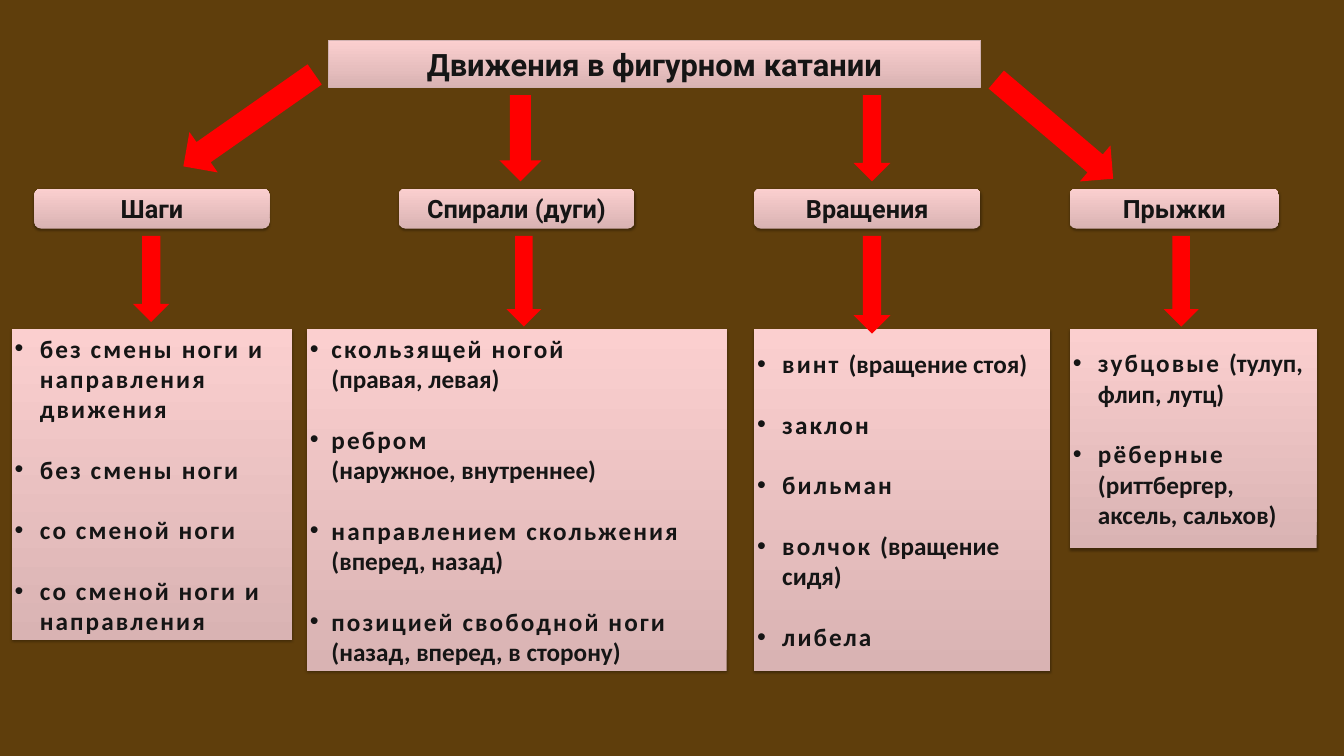
from lxml import etree
from pptx import Presentation
from pptx.dml.color import RGBColor
from pptx.enum import shapes, text
from pptx.oxml import ns
from pptx.util import Pt

HUES = {"back": "5F3E0C", "low": "D9B3B3", "high": "FBCFCF",
        "edge": "D1B2B2", "ink": "151515", "arrow": "FF0000"}
KIND = shapes.MSO_SHAPE

TITLE = "Движения в фигурном катании"
HEADS = [("Шаги", 49, 336), ("Спирали (дуги)", 569.5, 337),
         ("Вращения", 1077, 324), ("Прыжки", 1528, 299)]
LISTS = [
    (16.5, 401, 444, 36, [
        [("без смены ноги и направления движения", "")],
        [("без смены ноги", "")],
        [("со сменой ноги", "")],
        [("со сменой ноги и направления", "")]]),
    (438, 600, 488, 31, [
        [("скользящей ногой", ""), ("", "(правая, левая)")],
        [("ребром", ""), ("", "(наружное, внутреннее)")],
        [("направлением скольжения", ""), ("", "(вперед, назад)")],
        [("позицией свободной ноги", ""), ("", "(назад, вперед, в сторону)")]]),
    (1077, 423.5, 488, 36, [
        [("винт ", "(вращение стоя)")],
        [("заклон", "")],
        [("бильман", "")],
        [("волчок ", "(вращение сидя)")],
        [("либела", "")]]),
    (1528, 353, 313, 36, [
        [("зубцовые ", "(тулуп, флип, лутц)")],
        [("рёберные ", "(риттбергер, аксель, сальхов)")]]),
]
ARROWS = [(320.5, 57.5, 70.5, 229, 55), (713.5, 136, 60, 123, 0),
          (1219.5, 136, 52.5, 123, 0), (1473, 75, 67.5, 219, 310.3),
          (190, 337, 52, 123, 0), (723.5, 337, 50, 129.5, 0),
          (1219.5, 337, 52.5, 139.5, 0), (1662.5, 337, 50, 129.5, 0)]


def hue(name):
    return RGBColor.from_string(HUES[name])


def node(base, tag, **attrs):
    return etree.SubElement(base, ns.qn(tag), **attrs)


def add_run(para, words, font, size, gap=0):
    run = para.add_run()
    run.text = words
    run.font.name = font
    run.font.size = Pt(size)
    run.font.bold = True
    run.font.color.rgb = hue("ink")
    if gap:
        run.font._element.set("spc", str(gap * 100))


def shade(shape):
    shape.fill.gradient()
    shape.fill.gradient_angle = 90
    for stop, name in zip(shape.fill.gradient_stops, ("low", "high")):
        stop.color.rgb = hue(name)


def set_frame(shape):
    frame = shape.text_frame
    frame.word_wrap = True
    frame.auto_size = text.MSO_AUTO_SIZE.SHAPE_TO_FIT_TEXT
    frame.vertical_anchor = text.MSO_ANCHOR.MIDDLE
    frame.margin_left = frame.margin_right = Pt(4.5)
    frame.margin_top = frame.margin_bottom = Pt(4.5)
    return frame


def add_label(shape, words, size):
    para = set_frame(shape).paragraphs[0]
    para.alignment = text.PP_ALIGN.CENTER
    add_run(para, words, "Roboto", size)


def add_title(slide):
    title = slide.shapes.title
    title.left, title.top, title.width, title.height = map(Pt, (469.5, 57.5, 931.5, 67.5))
    geom = etree.Element(ns.qn("a:prstGeom"), prst="roundRect")
    node(geom, "a:avLst")
    title.element.spPr.insert(1, geom)
    shade(title)
    title.line.color.rgb = hue("edge")
    title.line.width = Pt(0.75)
    add_label(title, TITLE, 44)


def add_card(slide, kind, left, top, width, height):
    card = slide.shapes.add_shape(kind, Pt(left), Pt(top), Pt(width), Pt(height))
    shade(card)
    card.line.fill.background()
    card.shadow.inherit = False
    glow = node(card.element.spPr.find(ns.qn("a:effectLst")), "a:outerShdw",
                blurRad=str(Pt(3.5)), dist=str(Pt(2.2)), dir="5400000", rotWithShape="0")
    tint = node(glow, "a:srgbClr", val="000000")
    node(tint, "a:alpha", val="32000")
    return card


def add_list(slide, left, width, height, hang, items):
    frame = set_frame(add_card(slide, KIND.RECTANGLE, left, 470, width, height))
    for row, item in enumerate(items):
        for step, (main_words, note) in enumerate(item):
            first = row == 0 and step == 0
            para = frame.paragraphs[0] if first else frame.add_paragraph()
            para.alignment = text.PP_ALIGN.LEFT
            props = para._p.get_or_add_pPr()
            props.set("marL", str(Pt(hang)))
            props.set("indent", str(-Pt(hang) if step == 0 else 0))
            if step == 0:
                node(props, "a:buFont", typeface="Arial")
                node(props, "a:buChar", char="•")
                if row:
                    para.space_before = Pt(43.5)
            if main_words:
                add_run(para, main_words, "Calibri", 36, 3)
            if note:
                add_run(para, note, "Calibri", 36)


def add_arrow(slide, left, top, width, height, turn):
    arrow = slide.shapes.add_shape(KIND.DOWN_ARROW, Pt(left), Pt(top), Pt(width), Pt(height))
    arrow.rotation = turn
    arrow.fill.solid()
    arrow.fill.fore_color.rgb = hue("arrow")
    arrow.line.fill.background()
    arrow.shadow.inherit = False


def main():
    deck = Presentation()
    deck.slide_width, deck.slide_height = Pt(1920), Pt(1080)
    slide = deck.slides.add_slide(deck.slide_layouts[5])
    slide.background.fill.solid()
    slide.background.fill.fore_color.rgb = hue("back")
    add_title(slide)
    for words, left, width in HEADS:
        add_label(add_card(slide, KIND.ROUNDED_RECTANGLE, left, 269.5, width, 57), words, 36)
    for entry in LISTS:
        add_list(slide, *entry)
    for place in ARROWS:
        add_arrow(slide, *place)
    deck.save("out.pptx")


if __name__ == "__main__":
    main()
